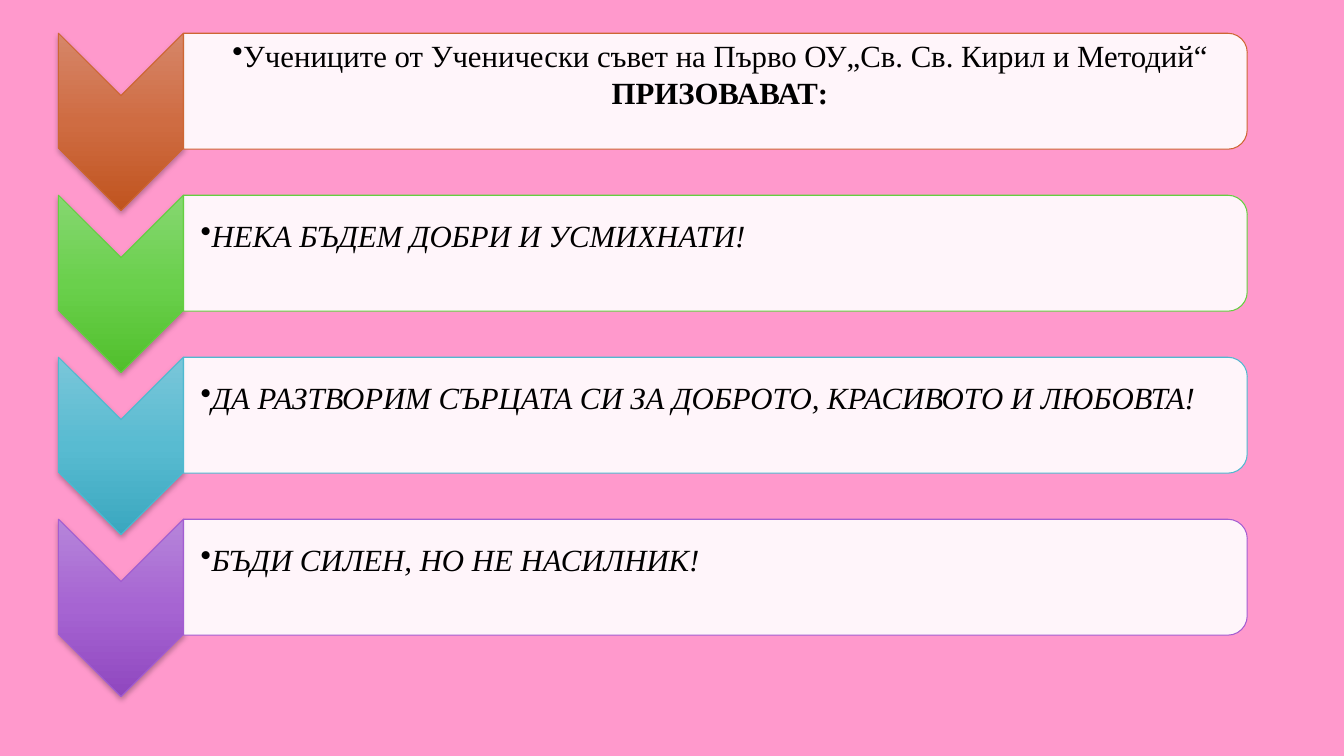
from dataclasses import dataclass

from lxml.etree import SubElement
from pptx import Presentation
from pptx.dml.color import RGBColor
from pptx.enum.shapes import MSO_SHAPE
from pptx.enum.text import MSO_ANCHOR, PP_ALIGN
from pptx.oxml.ns import qn
from pptx.util import Inches, Pt


@dataclass(frozen=True)
class Theme:
    background: str = "FF99CC"
    panel: str = "FFFFFF"
    text: str = "000000"
    shadow: str = "000000"
    font: str = "Times New Roman"
    size: float = 22
    line_width: float = 0.75
    accents: tuple = (
        ("CE6633", "D68669", "CF6C42", "C0541F"),
        ("64CF41", "86D771", "6AD04C", "51BF2C"),
        ("4FB9D0", "7AC6D9", "58BBD1", "3AA7BF"),
        ("A35DD1", "B685DA", "A664D2", "8F47BF"),
    )


THEME = Theme()
SLIDE_W, SLIDE_H = 13.33, 7.5
ARROW_LEFT, PANEL_LEFT, PANEL_RIGHT = 0.58, 1.82, 12.37
TOP, ROW_STEP = 0.33, 1.607
ARROW_H, PANEL_H = 1.76, 1.15
TEXT_W, TEXT_H, TEXT_OFFSET = 10.49, 1.03, 0.06
BOTTOM_INSET = 0.37

MESSAGES = (
    (PP_ALIGN.CENTER, (
        ("Учениците от Ученически съвет на Първо ОУ„Св. Св. Кирил и Методий“", False, False),
        ("ПРИЗОВАВАТ:", True, False),
    )),
    (PP_ALIGN.LEFT, (("НЕКА БЪДЕМ ДОБРИ И УСМИХНАТИ!", False, True),)),
    (PP_ALIGN.LEFT, (("ДА РАЗТВОРИМ СЪРЦАТА СИ ЗА ДОБРОТО, КРАСИВОТО И ЛЮБОВТА!", False, True),)),
    (PP_ALIGN.LEFT, (("БЪДИ СИЛЕН, НО НЕ НАСИЛНИК!", False, True),)),
)


def rgb(value):
    return RGBColor.from_string(value)


def add_color(parent, value, alpha=None):
    color = SubElement(parent, qn("a:srgbClr"), val=value)
    if alpha is not None:
        SubElement(color, qn("a:alpha"), val=str(alpha * 1000))


def add_turned_shape(slide, kind, left, top, width, height, line):
    x, y = left + (width - height) / 2, top + (height - width) / 2
    sp = slide.shapes.add_shape(kind, Inches(x), Inches(y), Inches(height), Inches(width))
    sp.rotation = 90
    sp.shadow.inherit = False
    sp.line.color.rgb = rgb(line)
    sp.line.width = Pt(THEME.line_width)
    return sp


def set_gradient(sp, colors):
    sp.fill.gradient()
    sp.fill.gradient_angle = 270
    grad = sp._element.spPr.find(qn("a:gradFill"))
    grad.set("rotWithShape", "0")
    stops = grad.find(qn("a:gsLst"))
    for stop in list(stops):
        stops.remove(stop)
    for position, color in zip((0, 50, 100), colors):
        add_color(SubElement(stops, qn("a:gs"), pos=str(position * 1000)), color)


def set_shadow(sp):
    effects = sp._element.spPr.find(qn("a:effectLst"))
    shadow = SubElement(effects, qn("a:outerShdw"), blurRad=str(Pt(4)),
                        dist=str(Pt(2)), dir="5400000", rotWithShape="0")
    add_color(shadow, THEME.shadow, 28)


def add_arrow(slide, top, line, colors):
    sp = add_turned_shape(slide, MSO_SHAPE.CHEVRON, ARROW_LEFT, top,
                          PANEL_LEFT - ARROW_LEFT, ARROW_H, line)
    set_gradient(sp, colors)
    set_shadow(sp)


def add_panel(slide, top, line):
    sp = add_turned_shape(slide, MSO_SHAPE.ROUND_2_SAME_RECTANGLE, PANEL_LEFT, top,
                          PANEL_RIGHT - PANEL_LEFT, PANEL_H, line)
    sp.fill.solid()
    sp.fill.fore_color.rgb = rgb(THEME.panel)
    color = sp._element.spPr.find(qn("a:solidFill")).find(qn("a:srgbClr"))
    SubElement(color, qn("a:alpha"), val="90000")


def add_message(slide, top, align, lines):
    box = slide.shapes.add_textbox(Inches(PANEL_LEFT), Inches(top + TEXT_OFFSET),
                                   Inches(TEXT_W), Inches(TEXT_H))
    tf = box.text_frame
    tf.word_wrap = True
    tf.vertical_anchor = MSO_ANCHOR.MIDDLE
    tf.margin_left = Inches(0.17)
    tf.margin_top = tf.margin_right = Inches(0.02)
    tf.margin_bottom = Inches(BOTTOM_INSET)
    p = tf.paragraphs[0]
    p.alignment = align
    pPr = p._p.get_or_add_pPr()
    pPr.set("marL", "0")
    pPr.set("indent", "0")
    SubElement(pPr, qn("a:buChar"), char="•")
    for index, (text, bold, italic) in enumerate(lines):
        if index:
            p.add_line_break()
        r = p.add_run()
        r.text = text
        r.font.name = THEME.font
        r.font.size = Pt(THEME.size)
        r.font.color.rgb = rgb(THEME.text)
        r.font.bold = bold
        r.font.italic = italic


def main():
    prs = Presentation()
    prs.slide_width, prs.slide_height = Inches(SLIDE_W), Inches(SLIDE_H)
    slide = prs.slides.add_slide(prs.slide_layouts[6])
    slide.background.fill.solid()
    slide.background.fill.fore_color.rgb = rgb(THEME.background)
    for row, ((align, lines), (line, *colors)) in enumerate(zip(MESSAGES, THEME.accents)):
        top = TOP + row * ROW_STEP
        add_arrow(slide, top, line, colors)
        add_panel(slide, top, line)
        add_message(slide, top, align, lines)
    prs.save("out.pptx")


if __name__ == "__main__":
    main()
